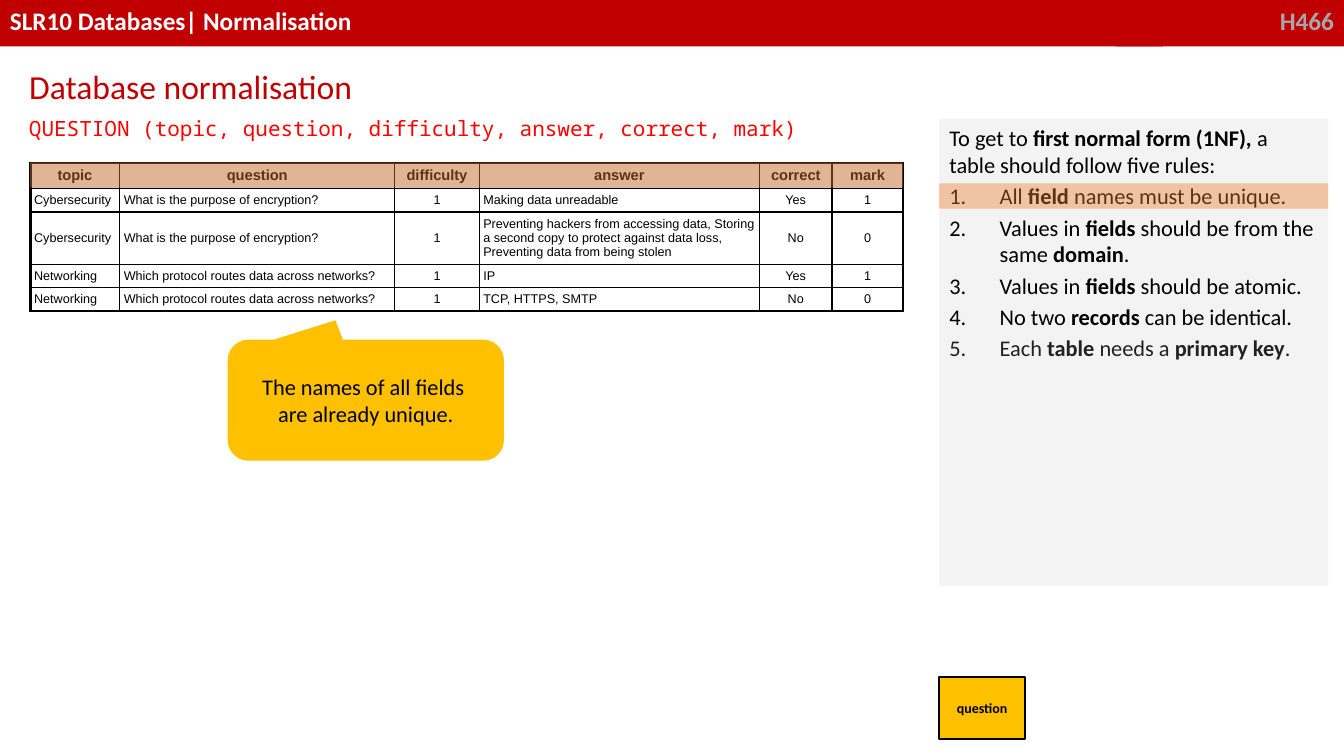
from dataclasses import dataclass

from lxml import etree
from pptx import Presentation
from pptx.dml.color import RGBColor
from pptx.enum.shapes import MSO_SHAPE
from pptx.enum.text import MSO_ANCHOR, MSO_AUTO_SIZE, PP_ALIGN
from pptx.oxml.ns import qn
from pptx.util import Cm, Pt

LEFT, CENTER, RIGHT = PP_ALIGN.LEFT, PP_ALIGN.CENTER, PP_ALIGN.RIGHT
TOP, MIDDLE = MSO_ANCHOR.TOP, MSO_ANCHOR.MIDDLE
FIXED, GROW = MSO_AUTO_SIZE.NONE, MSO_AUTO_SIZE.SHAPE_TO_FIT_TEXT
RECTANGLE = MSO_SHAPE.RECTANGLE
CALLOUT = MSO_SHAPE.ROUNDED_RECTANGULAR_CALLOUT


@dataclass(frozen=True)
class Theme:
    text_font: str = "Calibri"
    table_font: str = "Arial"
    code_font: str = "Noto Sans Mono"
    red: str = "C00000"
    code_red: str = "FF0000"
    white: str = "FFFFFF"
    black: str = "000000"
    charcoal: str = "222222"
    grey: str = "A6A6A6"
    panel: str = "F2F2F2"
    table_head: str = "D9D9D9"
    highlight: str = "ED7D31"
    amber: str = "FFC000"
    title_size: float = 24
    banner_size: float = 18
    body_size: float = 16
    code_size: float = 15
    head_size: float = 10.5
    cell_size: float = 9
    key_size: float = 10


THEME = Theme()
FIELDS = ["topic", "question", "difficulty", "answer", "correct", "mark"]
ENCRYPTION = ["Cybersecurity", "What is the purpose of encryption?", "1"]
ROUTING = ["Networking", "Which protocol routes data across networks?", "1"]
RECORDS = [
    ENCRYPTION + ["Making data unreadable", "Yes", "1"],
    ENCRYPTION + ["Preventing hackers from accessing data, Storing a second copy to "
                  "protect against data loss, Preventing data from being stolen", "No", "0"],
    ROUTING + ["IP", "Yes", "1"],
    ROUTING + ["TCP, HTTPS, SMTP", "No", "0"],
]
CENTRED_FIELDS = {"difficulty", "correct", "mark"}
FIELD_WIDTHS = [2.26, 6.93, 2.13, 7.06, 1.83, 1.79]
ROW_HEIGHTS = [0.64, 0.59, 1.32, 0.59, 0.59]
RULES_INTRO = "To get to *first normal form (1NF), *a table should follow five rules:"
RULES = [
    "All *field* names must be unique.",
    "Values in *fields* should be from the same *domain*.",
    "Values in *fields* should be atomic.",
    "No two *records* can be identical.",
    "Each *table *needs a *primary key*.",
]


def apply(target, values):
    for name, value in values.items():
        setattr(target, name, value)


def place(shape, box):
    apply(shape, dict(zip(("left", "top", "width", "height"), map(Cm, box))))


def paint(shape, color, opacity=100):
    shape.fill.solid()
    shape.fill.fore_color.rgb = RGBColor.from_string(color)
    if opacity < 100:
        tint = shape.fill._xPr.find(qn("a:solidFill"))[0]
        etree.SubElement(tint, qn("a:alpha"), val=str(opacity * 1000))


def write(paragraph, text, size, color, font=THEME.text_font, bold=False, **layout):
    apply(paragraph, layout)
    for index, part in enumerate(text.split("*")):
        for number, line in enumerate(part.split("\n")):
            if number:
                paragraph.add_line_break()
            if line:
                run = paragraph.add_run()
                run.text = line
                apply(run.font, {"size": Pt(size), "name": font, "bold": bold or index % 2 == 1})
                run.font.color.rgb = RGBColor.from_string(color)


def add_block(slide, box, color, opacity=100, kind=RECTANGLE, outline=None):
    block = slide.shapes.add_shape(kind, *map(Cm, box))
    block.shadow.inherit = False
    paint(block, color, opacity)
    if outline:
        block.line.color.rgb = RGBColor.from_string(outline)
        block.line.width = Pt(1.5)
    else:
        block.line.fill.background()
    return block


def label(block, text, size, color, anchor=MIDDLE, align=CENTER, bold=False):
    frame = block.text_frame
    apply(frame, {"word_wrap": True, "vertical_anchor": anchor})
    write(frame.paragraphs[0], text, size, color, bold=bold, alignment=align)


def set_title(title):
    place(title, (0.48, 1.45, 23.44, 1.3))
    paint(title, THEME.white, 70)
    apply(title.text_frame, {"auto_size": GROW, "word_wrap": True, "vertical_anchor": TOP})
    write(title.text_frame.paragraphs[0], "Database normalisation", THEME.title_size,
          THEME.red, alignment=LEFT, line_spacing=1.07, space_after=Pt(8))


def set_marker(paragraph, indent, tag, **attributes):
    properties = paragraph._p.get_or_add_pPr()
    properties.set("marL", str(indent))
    properties.set("indent", str(-indent))
    etree.SubElement(properties, qn(tag), **attributes)


def set_rules(panel):
    place(panel, (23.67, 3, 9.8, 11.76))
    paint(panel, THEME.panel, 90)
    frame = panel.text_frame
    apply(frame, {"auto_size": FIXED, "word_wrap": True, "vertical_anchor": TOP})
    intro = frame.paragraphs[0]
    set_marker(intro, 0, "a:buNone")
    write(intro, RULES_INTRO, THEME.body_size, THEME.black, space_before=Pt(0))
    for rule in RULES:
        item = frame.add_paragraph()
        set_marker(item, Cm(1.27), "a:buAutoNum", type="arabicPeriod")
        color = THEME.charcoal if rule == RULES[-1] else THEME.black
        write(item, rule, THEME.body_size, color, space_before=Pt(3.2))


def add_schema(slide):
    schema = slide.shapes.add_textbox(*map(Cm, (0.48, 2.79, 22.28, 0.89)))
    apply(schema.text_frame, {"word_wrap": True, "auto_size": GROW})
    write(schema.text_frame.paragraphs[0], f"QUESTION ({', '.join(FIELDS)})",
          THEME.code_size, THEME.code_red, THEME.code_font)


def set_borders(cell, widths):
    properties = cell._tc.get_or_add_tcPr()
    for side, width in widths.items():
        line = etree.SubElement(properties, qn(f"a:ln{side}"), w=str(Pt(width)))
        fill = etree.SubElement(line, qn("a:solidFill"))
        etree.SubElement(fill, qn("a:srgbClr"), val=THEME.black)


def add_records(slide):
    rows = [FIELDS] + RECORDS
    frame = slide.shapes.add_table(len(rows), len(FIELDS), *map(Cm, (0.76, 4.11, 22, 3.73)))
    table = frame.table
    apply(table, {"first_row": False, "horz_banding": False})
    for column, width in zip(table.columns, FIELD_WIDTHS):
        column.width = Cm(width)
    margins = {f"margin_{side}": Cm(0.1) for side in ("left", "right", "top", "bottom")}
    for r, record in enumerate(rows):
        table.rows[r].height = Cm(ROW_HEIGHTS[r])
        for c, value in enumerate(record):
            cell = table.cell(r, c)
            apply(cell, {**margins, "vertical_anchor": MIDDLE})
            set_borders(cell, {
                "L": 2.25 if c == 0 else 1,
                "R": 2.25 if c == len(FIELDS) - 1 else 1,
                "T": {0: 2.25, 1: 1.5}.get(r, 1),
                "B": {0: 1.5, len(RECORDS): 2.25}.get(r, 1),
            })
            heading = r == 0
            if heading:
                paint(cell, THEME.table_head)
            else:
                cell.fill.background()
            centred = heading or FIELDS[c] in CENTRED_FIELDS
            write(cell.text_frame.paragraphs[0], value,
                  THEME.head_size if heading else THEME.cell_size, THEME.black,
                  THEME.table_font, heading, alignment=CENTER if centred else LEFT)


def main():
    deck = Presentation()
    apply(deck, {"slide_width": Cm(33.87), "slide_height": Cm(19.05)})
    slide = deck.slides.add_slide(deck.slide_layouts[1])

    course = add_block(slide, (28.12, 0, 5.75, 1.17), THEME.red)
    label(course, "H466", THEME.banner_size, THEME.grey, TOP, RIGHT, True)
    topic = add_block(slide, (0, 0, 29.31, 1.17), THEME.red)
    label(topic, "SLR10 Databases| Normalisation", THEME.banner_size, THEME.white, TOP, LEFT, True)

    set_rules(slide.placeholders[1])
    set_title(slide.shapes.title)
    add_records(slide)
    add_block(slide, (23.67, 4.62, 9.8, 0.64), THEME.highlight, 40)
    add_schema(slide)

    entity = add_block(slide, (23.67, 17.07, 2.16, 1.55), THEME.amber, outline=THEME.black)
    label(entity, "question", THEME.key_size, THEME.black, bold=True)
    remark = add_block(slide, (5.74, 8.56, 6.96, 3.05), THEME.amber, kind=CALLOUT)
    for index, value in enumerate((-0.11, -0.66, 0.17)):
        remark.adjustments[index] = value
    label(remark, "The names of all fields \nare already unique.", THEME.body_size, THEME.black)
    add_block(slide, (0.76, 4.09, 22, 0.64), THEME.highlight, 40)

    deck.save("out.pptx")


if __name__ == "__main__":
    main()
